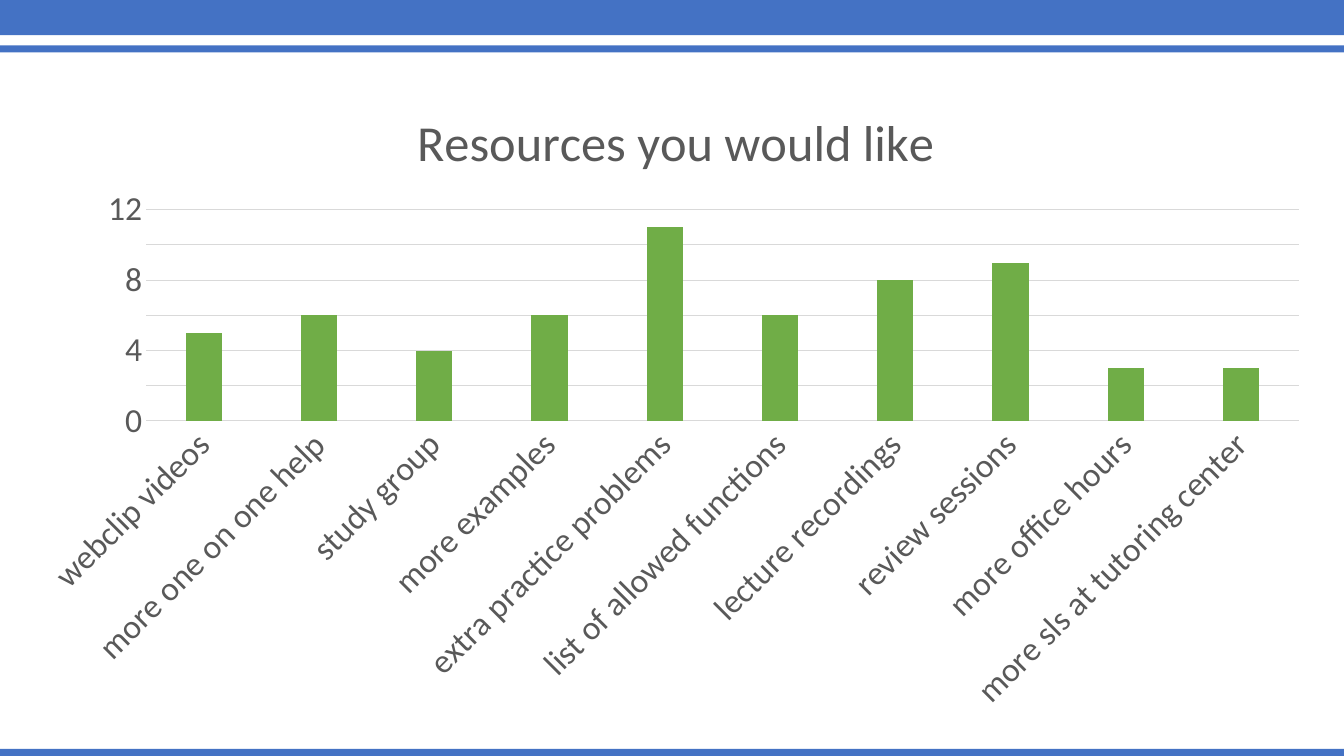
from pptx import Presentation
from pptx.chart.data import CategoryChartData
from pptx.dml.color import RGBColor
from pptx.enum.chart import XL_CHART_TYPE, XL_TICK_MARK
from pptx.enum.shapes import MSO_SHAPE
from pptx.oxml import parse_xml
from pptx.oxml.ns import nsdecls, qn
from pptx.util import Inches, Pt

COLUMNS = XL_CHART_TYPE.COLUMN_CLUSTERED
NO_TICK = XL_TICK_MARK.NONE
RECT = MSO_SHAPE.RECTANGLE
BLUE, GREEN, GRAY, PALE = "4472C4", "70AD47", "595959", "D9D9D9"


def rgb(value):
    return RGBColor.from_string(value)


def set_layout(element, index, target="", **fractions):
    """Place a chart part by fractions of the chart area."""
    for old in element.findall(qn("c:layout")):
        element.remove(old)
    modes = "".join(f'<c:{k}Mode val="edge"/>' for k in "xy")
    values = "".join(f'<c:{k} val="{v}"/>' for k, v in fractions.items())
    element.insert(index, parse_xml(
        f'<c:layout {nsdecls("c")}><c:manualLayout>{target}{modes}{values}'
        '</c:manualLayout></c:layout>'))


prs = Presentation()
prs.slide_width, prs.slide_height = Inches(13.33), Inches(7.5)
s = prs.slides.add_slide(prs.slide_layouts[6])

# Top and bottom bands
for top, height in [(-0.03, 0.38), (0.45, 0.07), (7.43, 0.07)]:
    sp = s.shapes.add_shape(RECT, 0, Inches(top), prs.slide_width, Inches(height))
    sp.shadow.inherit = False
    sp.fill.solid()
    sp.fill.fore_color.rgb = rgb(BLUE)
    sp.line.fill.background()

# Chart data
resources = {
    "webclip videos": 5,
    "more one on one help": 6,
    "study group": 4,
    "more examples": 6,
    "extra practice problems": 11,
    "list of allowed functions": 6,
    "lecture recordings": 8,
    "review sessions": 9,
    "more office hours": 3,
    "more sls at tutoring center": 3,
}
data = CategoryChartData()
data.categories = list(resources)
data.add_series("Series 1", list(resources.values()))
chart = s.shapes.add_chart(COLUMNS, Inches(0.15), Inches(0.64),
                           Inches(12.99), Inches(6.55), data).chart
chart.has_legend = False
chart.font.name = "Calibri"
chart.font.size = Pt(24)

# Title
chart.has_title = True
tf = chart.chart_title.text_frame
tf.text = "Resources you would like"
font = tf.paragraphs[0].runs[0].font
font.name, font.size, font.bold = "Calibri", Pt(36), False
font.color.rgb = rgb(GRAY)
set_layout(chart.chart_title._element, 1, x=0.3, y=0.05)

# Columns
plot = chart.plots[0]
plot.vary_by_categories = False
plot.gap_width, plot.overlap = 219, -27
fill = plot.series[0].format.fill
fill.solid()
fill.fore_color.rgb = rgb(GREEN)
set_layout(chart._chartSpace.chart.plotArea, 0, '<c:layoutTarget val="inner"/>',
           x=0.1, y=0.22, w=0.88, h=0.32)

# Axes
cat_axis, val_axis = chart.category_axis, chart.value_axis
for axis in (cat_axis, val_axis):
    axis.major_tick_mark = axis.minor_tick_mark = NO_TICK
    font = axis.tick_labels.font
    font.name, font.size = "Calibri", Pt(24)
    font.color.rgb = rgb(GRAY)
val_axis.minimum_scale, val_axis.maximum_scale = 0, 12
val_axis.major_unit = 2
val_axis.has_major_gridlines = True
val_axis.format.line.fill.background()
for line in (cat_axis.format.line, val_axis.major_gridlines.format.line):
    line.color.rgb = rgb(PALE)
    line.width = Pt(0.75)

# Slanted category labels
body = cat_axis._element.find(qn("c:txPr")).find(qn("a:bodyPr"))
body.set("rot", "-2700000")
body.set("vert", "horz")

prs.save("out.pptx")
